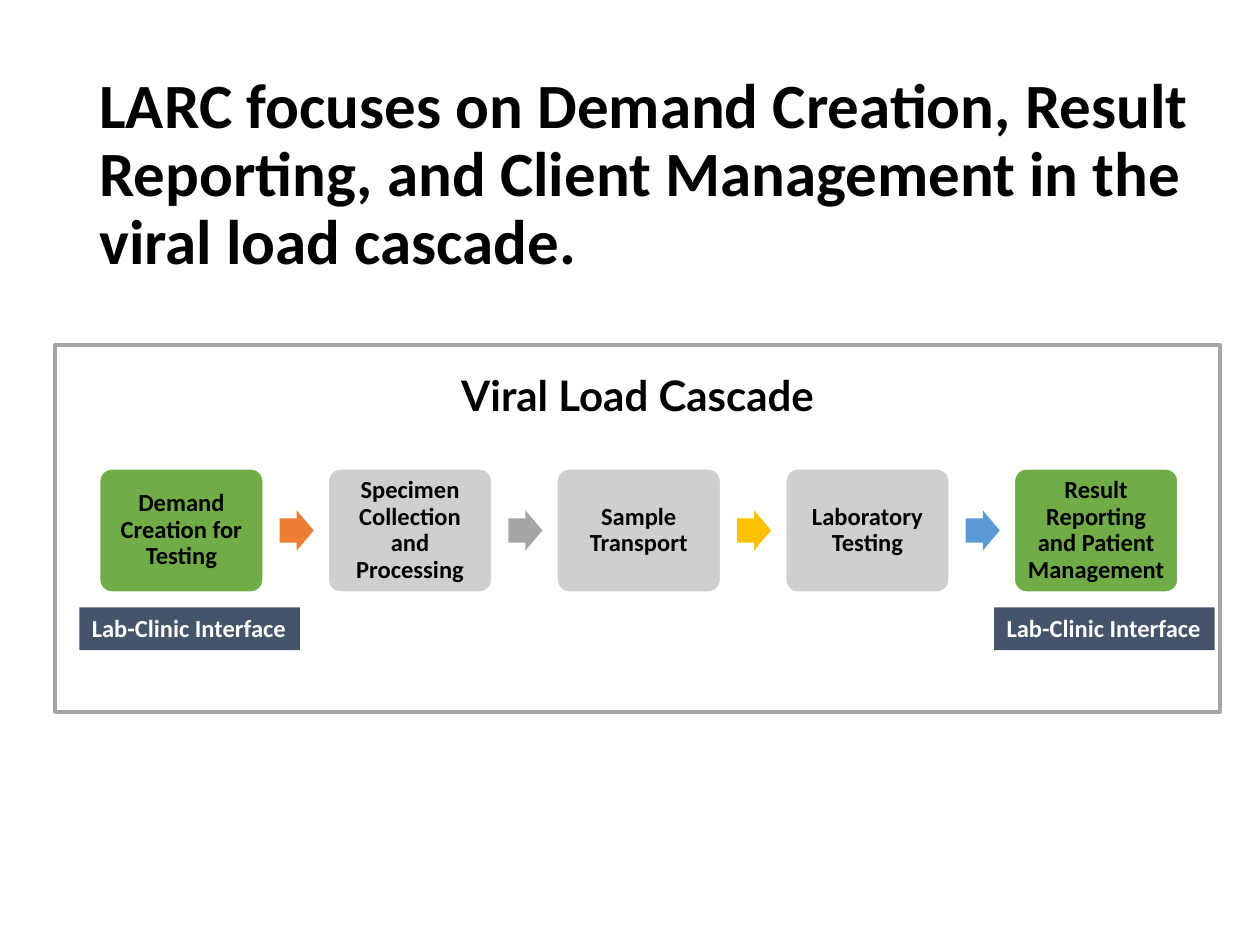
"""Build the viral load cascade slide."""
from pptx import Presentation
from pptx import util as u
from pptx.dml.color import RGBColor
from pptx.enum import shapes, text

BLACK = RGBColor(0x00, 0x00, 0x00)
WHITE = RGBColor(0xFF, 0xFF, 0xFF)
GREEN = RGBColor(0x70, 0xAD, 0x47)
SILVER = RGBColor(0xD0, 0xCE, 0xCE)
GRAY = RGBColor(0xA5, 0xA5, 0xA5)
ORANGE = RGBColor(0xED, 0x7D, 0x31)
GOLD = RGBColor(0xFF, 0xC0, 0x00)
BLUE = RGBColor(0x5B, 0x9B, 0xD5)
SLATE = RGBColor(0x44, 0x54, 0x6A)

TITLE = ("LARC focuses on Demand Creation, Result Reporting, and Client "
         "Management in the viral load cascade.")
HEADING = "Viral Load Cascade"
STEPS = [
    ("Demand Creation for Testing", GREEN),
    ("Specimen Collection and Processing", SILVER),
    ("Sample Transport", SILVER),
    ("Laboratory Testing", SILVER),
    ("Result Reporting and Patient Management", GREEN),
]
ARROW_COLORS = [ORANGE, GRAY, GOLD, BLUE]
INTERFACE = "Lab-Clinic Interface"
INTERFACE_LEFTS = [0.63, 7.89]

STEP_LEFT, STEP_TOP, STEP_WIDTH, STEP_HEIGHT = 0.79, 3.72, 1.3, 0.98
STEP_PITCH = 1.815
ARROW_OFFSET, ARROW_WIDTH, ARROW_HEIGHT = 1.43, 0.27, 0.32
ARROW_TOP = STEP_TOP + (STEP_HEIGHT - ARROW_HEIGHT) / 2


def add_box(page, kind, place, fill, line=None, line_width=1):
    box = page.shapes.add_shape(kind, *map(u.Inches, place))
    box.shadow.inherit = False
    box.fill.solid()
    box.fill.fore_color.rgb = fill
    if line is None:
        box.line.fill.background()
    else:
        box.line.color.rgb = line
        box.line.width = u.Pt(line_width)
    return box


def write(box, words, size, color=BLACK, font="Calibri",
          align=text.PP_ALIGN.LEFT, spacing=1.0, **frame_format):
    frame = box.text_frame
    frame_format = {"word_wrap": True, **frame_format}
    for name, value in frame_format.items():
        setattr(frame, name, value)
    para = frame.paragraphs[0]
    para.alignment = align
    para.line_spacing = spacing
    span = para.add_run()
    span.text = words
    for name, value in {"name": font, "size": u.Pt(size), "bold": True}.items():
        setattr(span.font, name, value)
    span.font.color.rgb = color


def main():
    deck = Presentation()
    deck.slide_width, deck.slide_height = u.Inches(10), u.Inches(7.5)
    page = deck.slides.add_slide(deck.slide_layouts[6])
    kinds = shapes.MSO_SHAPE
    center = text.PP_ALIGN.CENTER
    middle = text.MSO_ANCHOR.MIDDLE

    add_box(page, kinds.RECTANGLE, (0.44, 2.74, 9.24, 2.91), WHITE, GRAY, 2.25)

    insets = dict.fromkeys(
        ("margin_left", "margin_top", "margin_right", "margin_bottom"),
        u.Inches(0.06))
    for index, (words, color) in enumerate(STEPS):
        left = STEP_LEFT + index * STEP_PITCH
        step = add_box(page, kinds.ROUNDED_RECTANGLE,
                       (left, STEP_TOP, STEP_WIDTH, STEP_HEIGHT), color, WHITE)
        step.adjustments[0] = 0.1
        write(step, words, 14, align=center, spacing=0.9,
              vertical_anchor=middle, **insets)
        if index < len(ARROW_COLORS):
            arrow = add_box(page, kinds.RIGHT_ARROW,
                            (left + ARROW_OFFSET, ARROW_TOP, ARROW_WIDTH, ARROW_HEIGHT),
                            ARROW_COLORS[index])
            arrow.adjustments[0] = 0.6

    for left in INTERFACE_LEFTS:
        label = add_box(page, kinds.RECTANGLE, (left, 4.82, 1.75, 0.34), SLATE)
        write(label, INTERFACE, 14, WHITE, word_wrap=False,
              vertical_anchor=text.MSO_ANCHOR.TOP)

    heading = page.shapes.add_textbox(*map(u.Inches, (3.47, 2.88, 3.18, 0.5)))
    write(heading, HEADING, 24, font="Lato", align=center)
    title = page.shapes.add_textbox(*map(u.Inches, (0.69, 0.26, 9.09, 2.28)))
    write(title, TITLE, 36, spacing=0.9, vertical_anchor=middle)

    deck.save("out.pptx")


if __name__ == "__main__":
    main()
